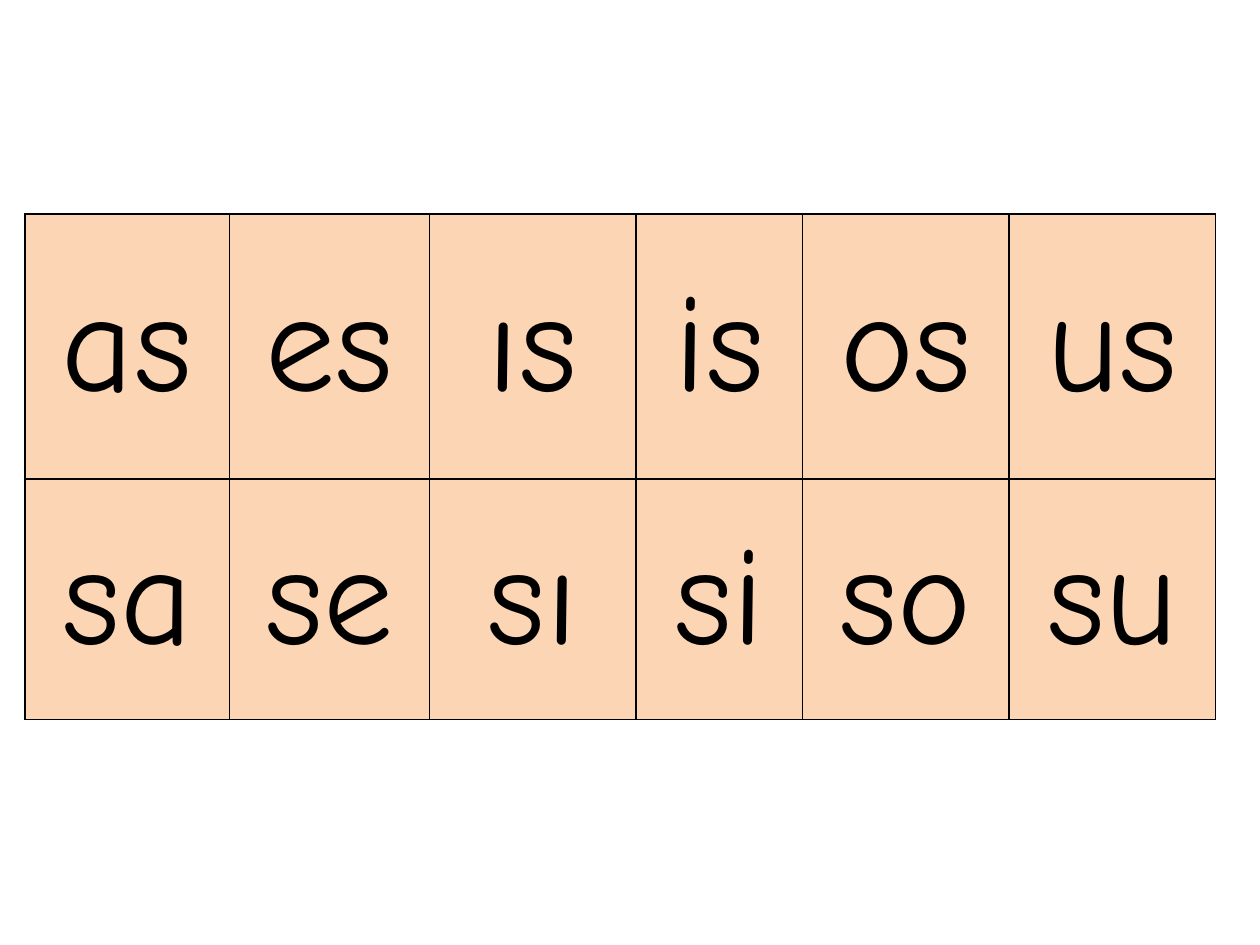
from dataclasses import dataclass

import pptx
import pptx.dml.color
import pptx.enum.text
import pptx.oxml.ns
import pptx.util
from lxml import etree
from pptx.util import Inches, Pt


@dataclass(frozen=True)
class Theme:
    card: str = "FCD5B5"
    ink: str = "000000"
    font: str = "Comic Neue"
    syllable_size: int = 80
    border_width: int = 1


THEME = Theme()
VOWELS = "aeıiou"
CONSONANT = "s"
COLUMN_WIDTHS = [1.62, 1.59, 1.64, 1.32, 1.64, 1.64]
ROW_HEIGHTS = [2.1, 1.91]


def rgb(value):
    return pptx.dml.color.RGBColor.from_string(value)


def add_borders(cell):
    """Line all four sides; call before the fill, which must follow the lines."""
    properties = cell._tc.get_or_add_tcPr()
    qn = pptx.oxml.ns.qn
    for side in ("a:lnL", "a:lnR", "a:lnT", "a:lnB"):
        line = etree.SubElement(properties, qn(side), w=str(Pt(THEME.border_width)))
        fill = etree.SubElement(line, qn("a:solidFill"))
        etree.SubElement(fill, qn("a:srgbClr"), val=THEME.ink)


def fill_card(cell, syllable):
    add_borders(cell)
    cell.fill.solid()
    cell.fill.fore_color.rgb = rgb(THEME.card)
    cell.vertical_anchor = pptx.enum.text.MSO_ANCHOR.MIDDLE
    cell.margin_left = cell.margin_right = Inches(0.07)
    cell.margin_top = cell.margin_bottom = 0
    cell.text = syllable
    paragraph = cell.text_frame.paragraphs[0]
    paragraph.alignment = pptx.enum.text.PP_ALIGN.CENTER
    paragraph.font.name = THEME.font
    paragraph.font.size = Pt(THEME.syllable_size)
    paragraph.font.color.rgb = rgb(THEME.ink)


def add_syllable_table(slide, syllable_rows):
    table = slide.shapes.add_table(
        len(ROW_HEIGHTS), len(COLUMN_WIDTHS), Inches(0.2), Inches(1.7),
        Inches(sum(COLUMN_WIDTHS)), Inches(sum(ROW_HEIGHTS))).table
    for column, width in zip(table.columns, COLUMN_WIDTHS):
        column.width = Inches(width)
    for row, height, syllables in zip(table.rows, ROW_HEIGHTS, syllable_rows):
        row.height = Inches(height)
        for cell, syllable in zip(row.cells, syllables):
            fill_card(cell, syllable)


def main():
    presentation = pptx.Presentation()
    presentation.slide_width = Inches(10)
    presentation.slide_height = Inches(7.5)
    slide = presentation.slides.add_slide(presentation.slide_layouts[6])
    closed_syllables = [vowel + CONSONANT for vowel in VOWELS]
    open_syllables = [CONSONANT + vowel for vowel in VOWELS]
    add_syllable_table(slide, [closed_syllables, open_syllables])
    presentation.save("out.pptx")


if __name__ == "__main__":
    main()
